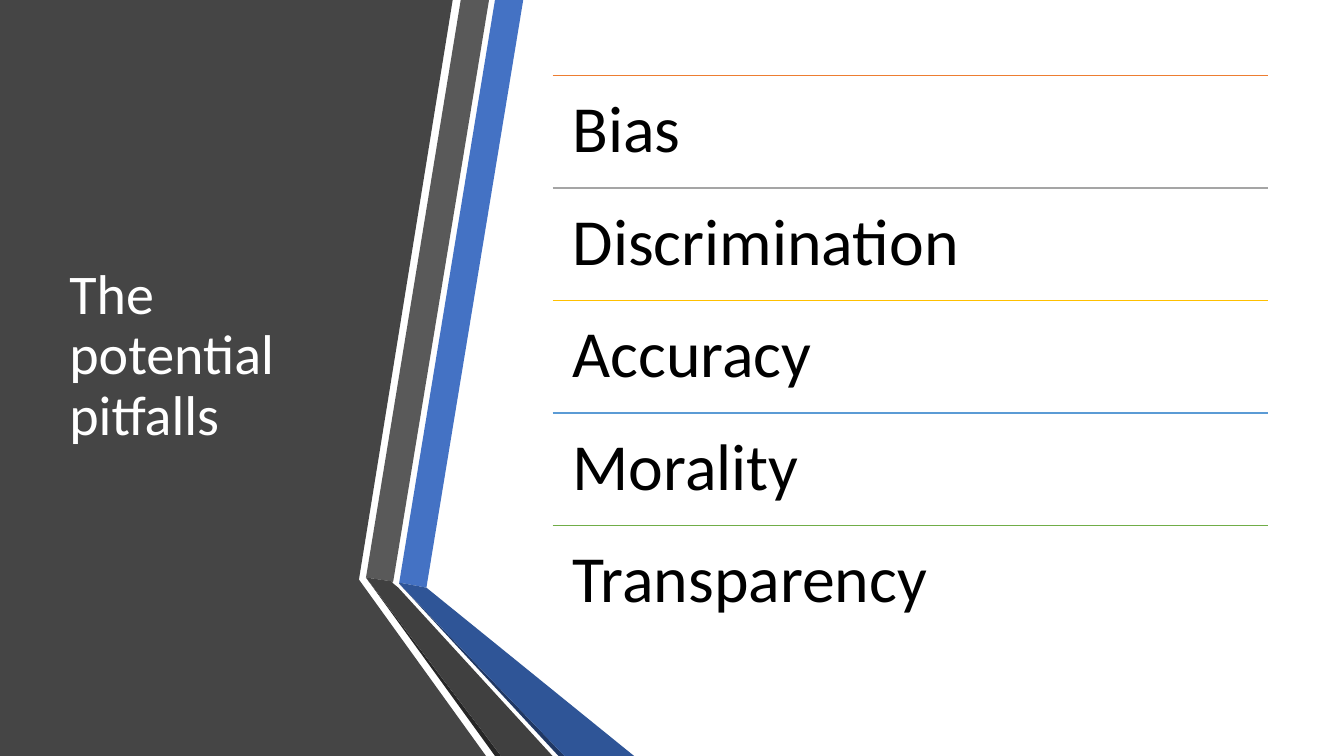
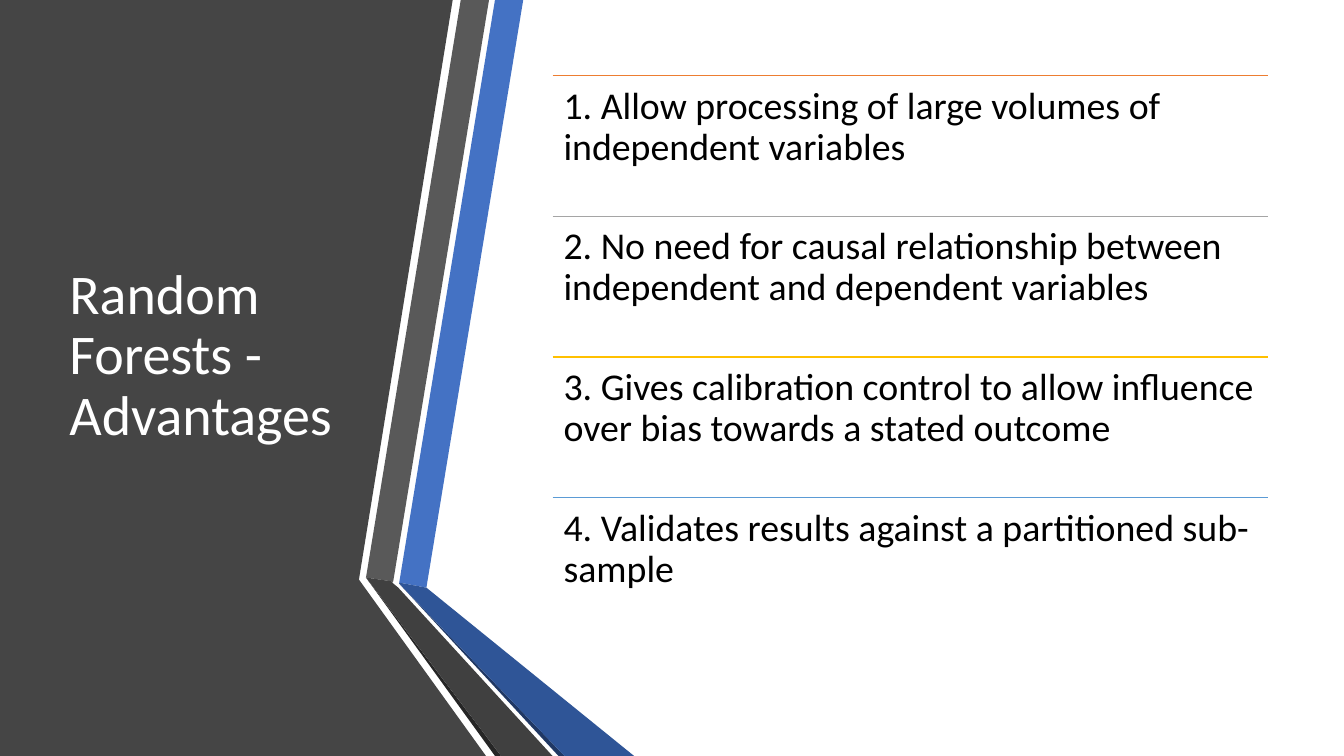
"""Build two slides with a folded side band, a title and a ruled list."""
import pptx
import pptx.dml.color
import pptx.enum.shapes
import pptx.enum.text
import pptx.oxml.ns
import pptx.util
from lxml import etree

Inches = pptx.util.Inches


class Theme:
    font = "Calibri"
    title_size = 40
    panel = "454545"
    stripe_blue = "4472C4"
    stripe_gray = "595959"
    fold_gray = "404040"
    fold_gray_edge = "262626"
    fold_blue = "2F5597"
    fold_blue_edge = "203864"
    title_color = "FFFFFF"
    text_color = "000000"
    rules = ["ED7D31", "A5A5A5", "FFC000", "5B9BD5", "70AD47"]
    rule_width = 1


BANDS = [
    (Theme.panel, [(0, 0), (4.49, 0), (3.56, 5.75), (4.82, 7.5), (0, 7.5)]),
    (Theme.stripe_blue, [(3.96, 5.78), (4.23, 5.83), (5.19, 0), (4.91, 0)]),
    (Theme.stripe_gray, [(4.85, 0), (4.57, 0), (3.63, 5.73), (3.9, 5.77)]),
    (Theme.fold_gray_edge, [(3.63, 5.73), (4.91, 7.5), (4.97, 7.5)]),
    (Theme.fold_blue_edge, [(3.96, 5.79), (5.54, 7.5), (5.6, 7.5)]),
    (Theme.fold_blue, [(3.96, 5.79), (5.6, 7.5), (6.29, 7.5), (4.23, 5.83), (3.96, 5.78)]),
    (Theme.fold_gray, [(5.48, 7.5), (3.95, 5.83), (3.89, 5.78), (3.9, 5.77), (3.63, 5.73), (4.97, 7.5)]),
]

SLIDES = [
    {
        "title": "The potential pitfalls",
        "size": 47,
        "inset": 0.2,
        "items": ["Bias", "Discrimination", "Accuracy", "Morality", "Transparency"],
    },
    {
        "title": "Random Forests - Advantages",
        "size": 27,
        "inset": 0.11,
        "items": [
            "1. Allow processing of large volumes of independent variables",
            "2. No need for causal relationship between independent and dependent variables",
            "3. Gives calibration control to allow influence over bias towards a stated outcome",
            "4. Validates results against a partitioned sub-sample",
        ],
    },
]

TOP, HEIGHT = 0.75, 5.58
TITLE_LEFT, TITLE_WIDTH = 0.59, 3.04
LIST_LEFT, LIST_WIDTH = 5.48, 7.1


def rgb(value):
    return pptx.dml.color.RGBColor.from_string(value)


def add_text(page, text, *, left, top, width, height, size, color, inset=0.1, inset_y=0.05,
             anchor=pptx.enum.text.MSO_ANCHOR.TOP):
    box = page.shapes.add_textbox(Inches(left), Inches(top), Inches(width), Inches(height))
    frame = box.text_frame
    frame.word_wrap = True
    frame.vertical_anchor = anchor
    frame.margin_left = frame.margin_right = Inches(inset)
    frame.margin_top = frame.margin_bottom = Inches(inset_y)
    para = frame.paragraphs[0]
    para.line_spacing = 0.9
    span = para.add_run()
    span.text = text
    span.font.name = Theme.font
    span.font.size = pptx.util.Pt(size)
    span.font.color.rgb = rgb(color)


deck = pptx.Presentation()
deck.slide_width = Inches(13.33)
deck.slide_height = Inches(7.5)

for content in SLIDES:
    page = deck.slides.add_slide(deck.slide_layouts[6])

    for color, points in BANDS:
        corners = [(Inches(x), Inches(y)) for x, y in points]
        outline = page.shapes.build_freeform(*corners[0])
        outline.add_line_segments(corners[1:], close=True)
        band = outline.convert_to_shape()
        band.shadow.inherit = False
        band.fill.solid()
        band.fill.fore_color.rgb = rgb(color)
        band.line.fill.background()

    add_text(page, content["title"], left=TITLE_LEFT, top=TOP, width=TITLE_WIDTH, height=HEIGHT,
             size=Theme.title_size, color=Theme.title_color,
             anchor=pptx.enum.text.MSO_ANCHOR.MIDDLE)

    row_height = HEIGHT / len(content["items"])
    for index, (item, color) in enumerate(zip(content["items"], Theme.rules)):
        row_top = TOP + index * row_height
        rule = page.shapes.add_connector(
            pptx.enum.shapes.MSO_CONNECTOR.STRAIGHT,
            Inches(LIST_LEFT), Inches(row_top), Inches(LIST_LEFT + LIST_WIDTH), Inches(row_top))
        rule.line.color.rgb = rgb(color)
        rule.line.width = pptx.util.Pt(Theme.rule_width)
        etree.SubElement(rule._element.spPr, pptx.oxml.ns.qn("a:effectLst"))
        add_text(page, item, left=LIST_LEFT, top=row_top, width=LIST_WIDTH, height=row_height,
                 size=content["size"], color=Theme.text_color,
                 inset=content["inset"], inset_y=content["inset"])

deck.save("out.pptx")
